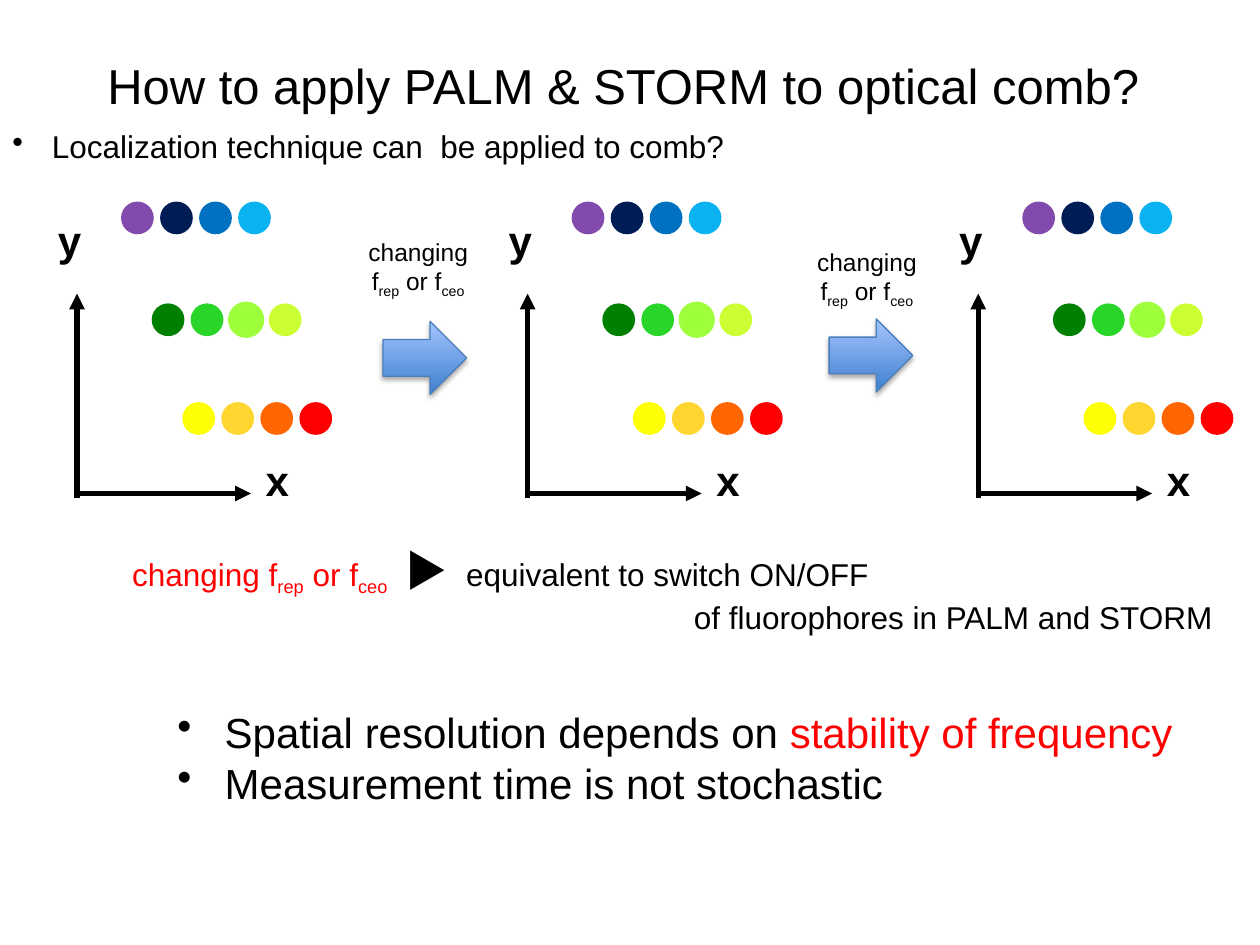
from dataclasses import dataclass

from lxml import etree
from pptx import Presentation
from pptx.dml.color import RGBColor
from pptx.enum.shapes import MSO_CONNECTOR, MSO_SHAPE
from pptx.enum.text import MSO_ANCHOR, MSO_AUTO_SIZE, PP_ALIGN
from pptx.oxml.ns import qn
from pptx.util import Pt

OVAL, RIGHT_ARROW = MSO_SHAPE.OVAL, MSO_SHAPE.RIGHT_ARROW
STRAIGHT = MSO_CONNECTOR.STRAIGHT
TOP, MIDDLE = MSO_ANCHOR.TOP, MSO_ANCHOR.MIDDLE
LEFT, CENTER, RIGHT = PP_ALIGN.LEFT, PP_ALIGN.CENTER, PP_ALIGN.RIGHT
GROW = MSO_AUTO_SIZE.SHAPE_TO_FIT_TEXT


@dataclass(frozen=True)
class Theme:
    font: str = "Arial"
    title: int = 28
    large: int = 24
    body: int = 18
    small: int = 14
    ink: str = "000000"
    accent: str = "FF0000"
    glow: str = "9FFF3E"
    arrow_dark: str = "3F80CE"
    arrow_light: str = "A4C4FF"
    arrow_line: str = "4B7EBC"
    comb: tuple = (
        ("824AAC", "001C54", "0070C0", "0AB3F0"),
        ("008000", "2AD52A", "9CFF3A", "CCFF33"),
        ("FFFF04", "FFD630", "FF6600", "FF0000"),
    )


@dataclass
class Span:
    text: str
    color: str = ""
    size: int = 0
    sub: bool = False


class SlideBuilder:
    def __init__(self, slide, theme):
        self.theme = theme
        self.slide = slide
        self.shapes = slide.shapes

    def start_group(self):
        self.shapes = self.slide.shapes.add_group_shape().shapes

    def end_group(self):
        self.shapes = self.slide.shapes

    def text(self, left, top, width, height, paras, size, align=(LEFT,),
             bold=False, bullet=0, wrap=False, anchor=TOP):
        """Each para is a list of spans; align gives one value per para or one for all."""
        box = self.shapes.add_textbox(Pt(left), Pt(top), Pt(width), Pt(height))
        frame = box.text_frame
        frame.word_wrap = wrap
        frame.vertical_anchor = anchor
        if not wrap:
            frame.auto_size = GROW
        for index, spans in enumerate(paras):
            para = frame.add_paragraph() if index else frame.paragraphs[0]
            para.alignment = align[index % len(align)]
            para.font.name = self.theme.font
            para.font.size = Pt(size)
            para.font.bold = bold
            para.font.color.rgb = RGBColor.from_string(self.theme.ink)
            if bullet:
                self.add_bullet(para, bullet)
            for span in spans:
                self.add_span(para, span)

    def add_span(self, para, span):
        run = para.add_run()
        run.text = span.text
        if span.color:
            run.font.color.rgb = RGBColor.from_string(span.color)
        if span.size:
            run.font.size = Pt(span.size)
        if span.sub:
            run._r.get_or_add_rPr().set("baseline", "-25000")

    def add_bullet(self, para, indent):
        props = para._p.get_or_add_pPr()
        props.set("marL", str(Pt(indent)))
        props.set("indent", str(-Pt(indent)))
        mark = etree.Element(qn("a:buChar"), char="•")
        props.find(qn("a:defRPr")).addprevious(mark)

    def dot(self, left, top, size, color, outline=""):
        dot = self.shapes.add_shape(OVAL, Pt(left), Pt(top), Pt(size), Pt(size))
        dot.shadow.inherit = False
        dot.fill.solid()
        dot.fill.fore_color.rgb = RGBColor.from_string(color)
        if outline:
            dot.line.color.rgb = RGBColor.from_string(outline)
            dot.line.width = Pt(2)
        else:
            dot.line.fill.background()

    def axis(self, x1, y1, x2, y2):
        axis = self.shapes.add_connector(STRAIGHT, Pt(x1), Pt(y1), Pt(x2), Pt(y2))
        axis.line.color.rgb = RGBColor.from_string(self.theme.ink)
        axis.line.width = Pt(3)
        etree.SubElement(axis.line._get_or_add_ln(), qn("a:tailEnd"), type="triangle")
        etree.SubElement(axis._element.spPr, qn("a:effectLst"))

    def block_arrow(self, left, top, width, height):
        arrow = self.shapes.add_shape(RIGHT_ARROW, Pt(left), Pt(top), Pt(width), Pt(height))
        arrow.fill.gradient()
        arrow.fill.gradient_angle = 90
        stops = arrow.fill.gradient_stops
        for stop, color in zip(stops, (self.theme.arrow_dark, self.theme.arrow_light)):
            stop.color.rgb = RGBColor.from_string(color)
        arrow.line.color.rgb = RGBColor.from_string(self.theme.arrow_line)
        arrow.line.width = Pt(0.75)
        # Soft shadow below the arrow
        arrow.shadow.inherit = False
        effects = arrow._element.spPr.find(qn("a:effectLst"))
        shadow = etree.SubElement(effects, qn("a:outerShdw"), blurRad=str(Pt(3.1)),
                                  dist=str(Pt(1.8)), dir="5400000", rotWithShape="0")
        color = etree.SubElement(shadow, qn("a:srgbClr"), val=self.theme.ink)
        etree.SubElement(color, qn("a:alpha"), val="35000")

    def comb_panel(self, left):
        """Axes with three shifted rows of comb modes."""
        self.start_group()
        for row, (top, colors) in enumerate(zip((115.2, 173.4, 229.8), self.theme.comb)):
            for column, color in enumerate(colors):
                outline = self.theme.glow if (row, column) == (1, 2) else ""
                self.dot(left + 43.2 + 17.5 * row + 22.3 * column, top, 18.7, color, outline)
        self.text(left + 118.8, 256.2, 28, 36, [[Span("x")]], self.theme.large, bold=True)
        self.text(left, 118.8, 29.5, 36, [[Span("y")]], self.theme.large, bold=True)
        self.axis(left + 18, 284.4, left + 18, 167.8)
        self.axis(left + 17, 282, left + 117.4, 282)
        self.end_group()

    def change_step(self, text_left, text_top, arrow_left, arrow_top):
        self.start_group()
        paras = [[Span("changing")], frequencies("f")]
        self.text(text_left, text_top, 72, 41, paras, self.theme.small, align=(CENTER,))
        self.block_arrow(arrow_left, arrow_top, 47.8, 41.8)
        self.end_group()


def frequencies(start, color=""):
    return [Span(start, color), Span("rep", color, sub=True),
            Span(" or f", color), Span("ceo", color, sub=True)]


def main():
    deck = Presentation()
    deck.slide_width, deck.slide_height = Pt(720), Pt(540)
    theme = Theme()
    page = SlideBuilder(deck.slides.add_slide(deck.slide_layouts[6]), theme)

    # Title and opening question
    page.text(36, 3.6, 648, 90, [[Span("How to apply PALM & STORM to optical comb? ")]],
              theme.title, align=(CENTER,), wrap=True, anchor=MIDDLE)
    page.text(0, 69, 425, 29, [[Span("Localization technique can  be applied to comb?")]],
              theme.body, bullet=22.5)

    # Three comb states and the changes between them
    for index in range(3):
        page.comb_panel(26 + 257.5 * index)
    page.change_step(203, 131.8, 218.9, 183.6)
    page.change_step(459.4, 137.5, 473.8, 182.2)

    # What the change amounts to
    page.text(68.4, 307.4, 631.6, 80, [
        frequencies("changing f", theme.accent) + [
            Span("　", sub=True), Span("▶", size=theme.large), Span("　", sub=True),
            Span("equivalent to switch ON/OFF")],
        [Span("of fluorophores in PALM and STORM")],
    ], theme.body, align=(LEFT, RIGHT), wrap=True)

    # Conclusions
    page.text(94.3, 400.3, 588, 65.5, [
        [Span("Spatial resolution depends on "), Span("stability of frequency", theme.accent)],
        [Span("Measurement time is not stochastic")],
    ], theme.large, bullet=27)

    deck.save("out.pptx")


if __name__ == "__main__":
    main()
